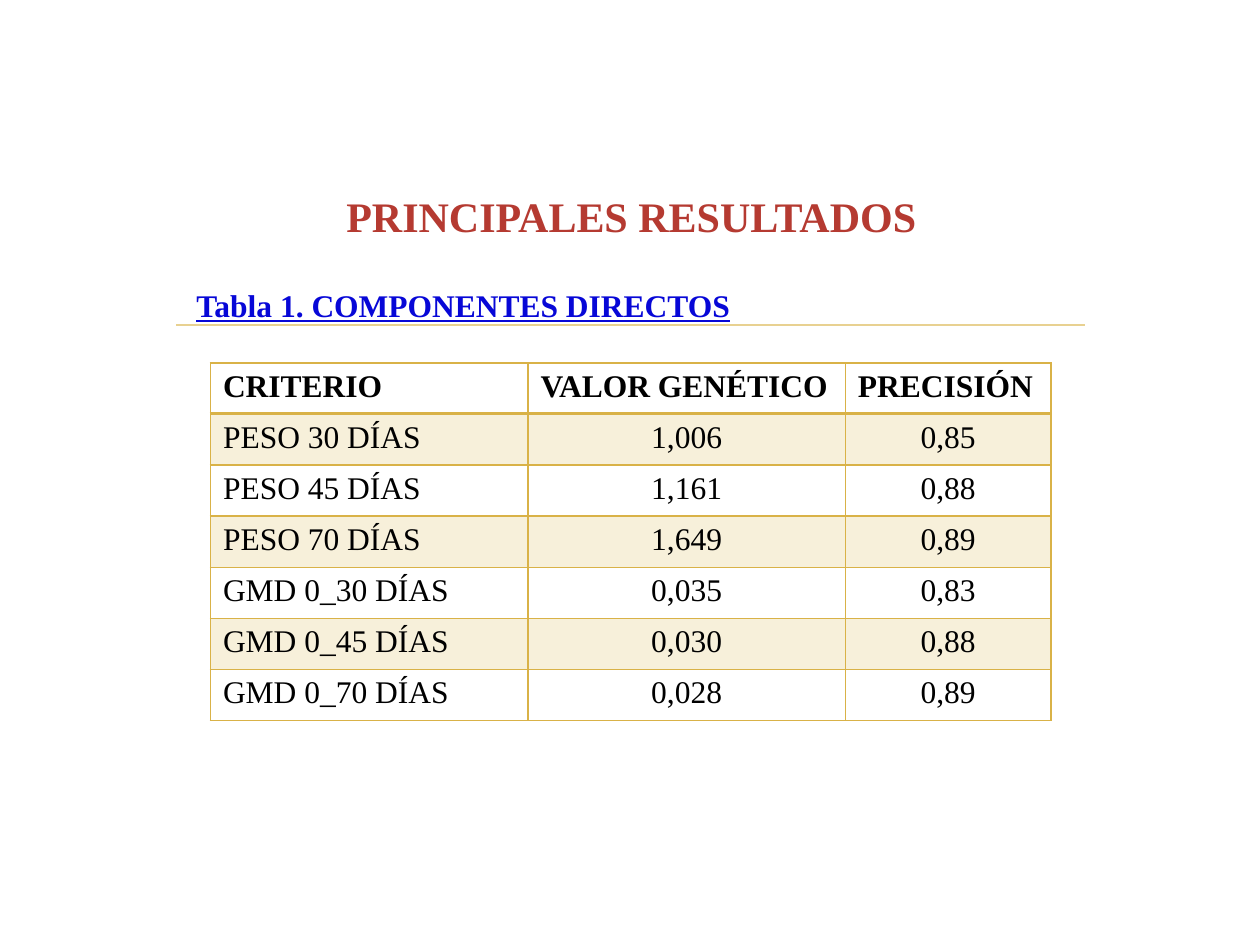
from lxml import etree
from pptx import Presentation
from pptx import util as u
from pptx.dml.color import RGBColor
from pptx.enum import shapes, text
from pptx.oxml.ns import qn

# Content
TITLE = "PRINCIPALES RESULTADOS"
CAPTION = "Tabla 1. COMPONENTES DIRECTOS"
ROWS = [
    ("CRITERIO", "VALOR GENÉTICO", "PRECISIÓN"),
    ("PESO 30 DÍAS", "1,006", "0,85"),
    ("PESO 45 DÍAS", "1,161", "0,88"),
    ("PESO 70 DÍAS", "1,649", "0,89"),
    ("GMD 0_30 DÍAS", "0,035", "0,83"),
    ("GMD 0_45 DÍAS", "0,030", "0,88"),
    ("GMD 0_70 DÍAS", "0,028", "0,89"),
]
COLUMN_WIDTHS = (2.52, 2.52, 1.63)
TABLE_HEIGHT = 2.84

FONT = "Times New Roman"
RED = RGBColor(0xB5, 0x3A, 0x31)
BLUE = RGBColor(0x07, 0x07, 0xD7)
BLACK = RGBColor(0, 0, 0)
GOLD = RGBColor(0xD9, 0xB2, 0x47)
PALE_GOLD = RGBColor(0xE8, 0xD1, 0x91)
BAND = RGBColor(0xF7, 0xF0, 0xDA)


def style(paragraph, size, color, bold=False, underline=None, align=text.PP_ALIGN.LEFT):
    paragraph.alignment = align
    for run in paragraph.runs:
        font = run.font
        font.name, font.size, font.bold = FONT, u.Pt(size), bold
        font.underline = underline
        font.color.rgb = color


def add_border(cell, side, points):
    properties = cell._tc.get_or_add_tcPr()
    line = etree.SubElement(properties, qn(f"a:ln{side}"), w=str(u.Pt(points)))
    fill = etree.SubElement(line, qn("a:solidFill"))
    etree.SubElement(fill, qn("a:srgbClr"), val=str(GOLD))


presentation = Presentation()
presentation.slide_width, presentation.slide_height = u.Inches(10), u.Inches(7.5)
slide = presentation.slides.add_slide(presentation.slide_layouts[5])

# Rule under the caption
rule = slide.shapes.add_connector(
    shapes.MSO_CONNECTOR.STRAIGHT,
    u.Inches(1.4), u.Inches(2.58), u.Inches(8.61), u.Inches(2.58))
rule.line.color.rgb = PALE_GOLD
rule.line.width = u.Pt(1.25)
etree.SubElement(rule._element.spPr, qn("a:effectLst"))

# Title
title = slide.shapes.title
title.left, title.top = u.Inches(1.29), u.Inches(1)
title.width, title.height = u.Inches(7.44), u.Inches(1.43)
title.text_frame.text = TITLE
title.text_frame.vertical_anchor = text.MSO_ANCHOR.MIDDLE
style(title.text_frame.paragraphs[0], 24, RED, bold=True, align=text.PP_ALIGN.CENTER)

# Results table
table = slide.shapes.add_table(
    len(ROWS), len(COLUMN_WIDTHS), u.Inches(1.67), u.Inches(2.88),
    u.Inches(sum(COLUMN_WIDTHS)), u.Inches(TABLE_HEIGHT)).table
table.first_row = table.horz_banding = False
for column, width in zip(table.columns, COLUMN_WIDTHS):
    column.width = u.Inches(width)
for r, values in enumerate(ROWS):
    for c, value in enumerate(values):
        cell = table.cell(r, c)
        cell.text_frame.text = value
        centered = r > 0 and c > 0
        style(cell.text_frame.paragraphs[0], 18, BLACK, bold=r == 0,
              align=text.PP_ALIGN.CENTER if centered else text.PP_ALIGN.LEFT)
        for side in "LRTB":
            under_header = (r, side) in ((0, "B"), (1, "T"))
            add_border(cell, side, 2 if under_header else 1)
        if r % 2:
            cell.fill.solid()
            cell.fill.fore_color.rgb = BAND
        else:
            cell.fill.background()

# Caption
caption = slide.shapes.add_textbox(
    u.Inches(1.46), u.Inches(2.22), u.Inches(4.65), u.Inches(0.4))
caption.text_frame.word_wrap = True
caption.text_frame.text = CAPTION
style(caption.text_frame.paragraphs[0], 18, BLUE, bold=True, underline=True)

presentation.save("out.pptx")
